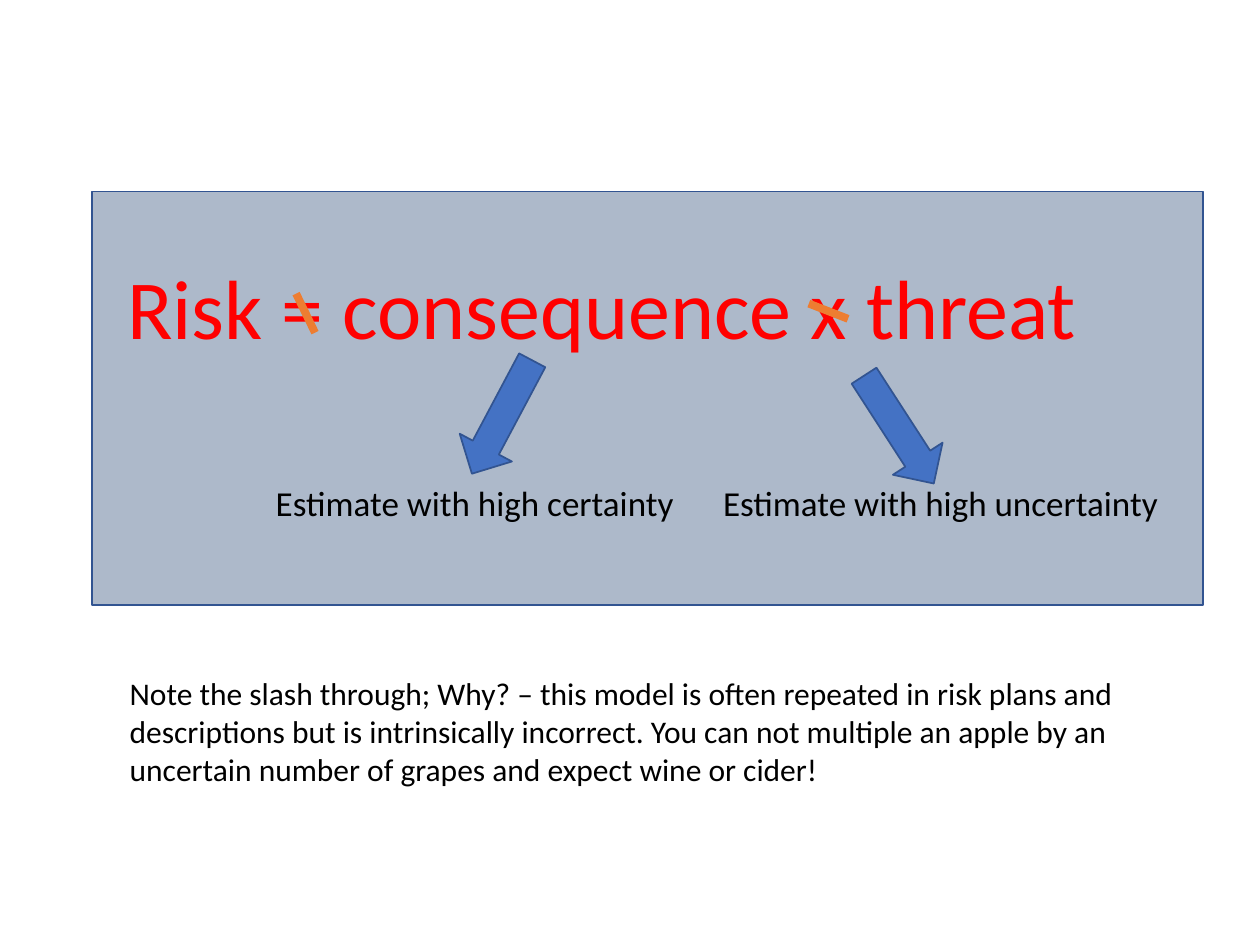
from dataclasses import dataclass

from lxml.etree import SubElement
from pptx import Presentation
from pptx.dml.color import RGBColor
from pptx.enum.shapes import MSO_CONNECTOR as Connector, MSO_SHAPE as Shape
from pptx.enum.text import MSO_ANCHOR as Anchor, MSO_AUTO_SIZE as AutoSize, PP_ALIGN as Align
from pptx.oxml.ns import qn
from pptx.util import Pt


@dataclass(frozen=True)
class Theme:
    font: str = "Calibri"
    formula_size: int = 48
    label_size: int = 20
    note_size: int = 18
    formula: str = "FF0000"
    text: str = "000000"
    panel: str = "ADB9CA"
    arrow: str = "4472C4"
    outline: str = "325491"
    slash: str = "ED7D31"
    outline_width: float = 1
    slash_width: float = 4.5


THEME = Theme()

SLIDE_SIZE = (720, 540)
PANEL = (52.56, 109.44, 635.04, 236.16)

FORMULA = ("Risk = consequence x threat", (65.5, 142.5, 562.3, 65.5))
NOTE = (
    "Note the slash through; Why? – this model is often repeated in risk plans and "
    "descriptions but is intrinsically incorrect. You can not multiple an apple by an "
    "uncertain number of grapes and expect wine or cider!",
    (67, 381.6, 635, 72.7),
)

LABEL_TOP, LABEL_HEIGHT = 271.4, 31.7
LABELS = [
    ("Estimate with high certainty", 150.5, 244.8),
    ("Estimate with high uncertainty", 406.1, 265.7),
]

ARROW_SIZE = (33.8, 73.4)
ARROWS = [(270, 201.6, 28), (496.8, 208.8, 327.1)]

SLASHES = [(169.2, 167.8, 180, 190.1), (462.2, 173.5, 484.6, 182.2)]


def points(values):
    return [Pt(value) for value in values]


def color(value):
    return RGBColor.from_string(value)


def add_block(slide, kind, box, fill):
    shape = slide.shapes.add_shape(kind, *points(box))
    shape.shadow.inherit = False
    shape.fill.solid()
    shape.fill.fore_color.rgb = color(fill)
    shape.line.color.rgb = color(THEME.outline)
    shape.line.width = Pt(THEME.outline_width)
    return shape


def write_text(shape, text, size, text_color, wrap=False):
    frame = shape.text_frame
    frame.word_wrap = wrap
    frame.auto_size = AutoSize.SHAPE_TO_FIT_TEXT
    frame.vertical_anchor = Anchor.TOP
    paragraph = frame.paragraphs[0]
    paragraph.alignment = Align.LEFT
    paragraph.line_spacing = 1.0
    run = paragraph.add_run()
    run.text = text
    run.font.name = THEME.font
    run.font.size = Pt(size)
    run.font.color.rgb = color(text_color)


def add_formula(slide, panel):
    text, box = FORMULA
    title = slide.shapes.title
    title.left, title.top, title.width, title.height = points(box)
    write_text(title, text, THEME.formula_size, THEME.formula)
    panel.element.addnext(title.element)


def add_text(slide, text, box, size, wrap=False):
    shape = slide.shapes.add_textbox(*points(box))
    write_text(shape, text, size, THEME.text, wrap)


def add_slash(slide, ends):
    slash = slide.shapes.add_connector(Connector.STRAIGHT, *points(ends))
    slash.line.color.rgb = color(THEME.slash)
    slash.line.width = Pt(THEME.slash_width)
    SubElement(slash.element.spPr, qn("a:effectLst"))


def main():
    presentation = Presentation()
    presentation.slide_width, presentation.slide_height = points(SLIDE_SIZE)
    slide = presentation.slides.add_slide(presentation.slide_layouts[5])

    panel = add_block(slide, Shape.RECTANGLE, PANEL, THEME.panel)
    add_formula(slide, panel)
    for text, left, width in LABELS:
        add_text(slide, text, (left, LABEL_TOP, width, LABEL_HEIGHT), THEME.label_size)
    for left, top, rotation in ARROWS:
        arrow = add_block(slide, Shape.DOWN_ARROW, (left, top, *ARROW_SIZE), THEME.arrow)
        arrow.rotation = rotation
    for ends in SLASHES:
        add_slash(slide, ends)
    add_text(slide, *NOTE, THEME.note_size, wrap=True)

    presentation.save("out.pptx")


if __name__ == "__main__":
    main()
